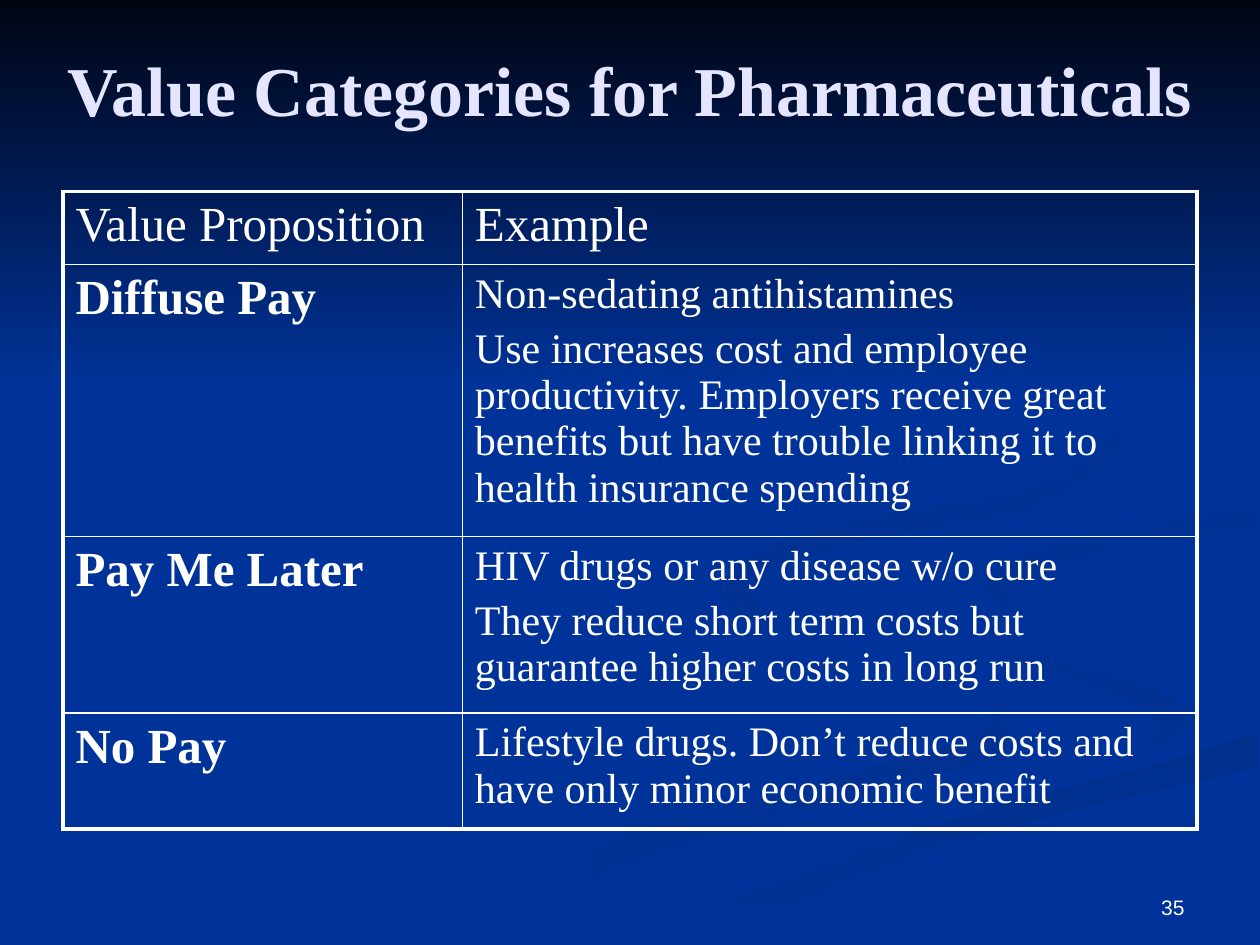
import collections
import itertools

import lxml.etree
import pptx
import pptx.dml.color
import pptx.enum.shapes
import pptx.enum.text
import pptx.oxml.ns
import pptx.util

Inches = pptx.util.Inches
Pt = pptx.util.Pt
Align = pptx.enum.text.PP_ALIGN
Anchor = pptx.enum.text.MSO_ANCHOR
Box = collections.namedtuple("Box", "left top width height")
Swoosh = collections.namedtuple("Swoosh", "start end angle edges")


class Theme:
    background = "003399"
    night = "000514"
    title = "E5E5FF"
    text = "FFFFFF"
    serif = "Times New Roman"
    sans = "Arial"
    title_size = 40
    label_size = 28
    body_size = 24
    number_size = 12
    outer_line = 2.25
    inner_line = 1


SWOOSHES = [
    Swoosh(Theme.background, "003193", 0, [
        [(7.81, 5.53), (6.82, 5.19), (5.94, 4.85), (5.75, 4.59)],
        [(5.75, 4.59), (5.81, 4.84), (6.79, 5.19), (7.81, 5.56), (7.67, 5.87),
         (6.16, 6.29), (4.58, 6.74), (3, 7.49)],
        [(3.61, 7.49), (4.99, 6.87), (6.51, 6.4), (7.8, 6.05), (8, 5.81), (7.81, 5.53)]]),
    Swoosh(Theme.background, "003193", 45, [
        [(7.24, 4.64), (7.46, 5), (8.38, 5.36), (9.07, 5.62), (9.17, 5.85), (8.94, 6.05)],
        [(8.94, 6.05), (9.43, 5.76), (9.19, 5.47), (8.3, 5.19), (7.45, 4.9), (7.24, 4.64)]]),
    Swoosh("002F8C", Theme.background, 90, [
        [(5.03, 7.49), (5.71, 7.49)],
        [(5.71, 7.49), (6.49, 7.1), (7.85, 6.61), (9.98, 6.09)],
        [(9.98, 5.81), (9.2, 6.06), (7.64, 6.47), (6.3, 6.93), (5.03, 7.49)]]),
    Swoosh(Theme.background, Theme.background, 0, [
        [(7.25, 4.64), (7.93, 5.09), (9.2, 5.47), (9.42, 5.79), (8.43, 6.18),
         (6.63, 6.68), (4.77, 7.49)],
        [(5.03, 7.49), (6.3, 6.93), (7.97, 6.38), (9.99, 5.81)],
        [(9.99, 5.38), (8.66, 5.09), (7.81, 4.63), (8.5, 4.27), (9.99, 4.02)],
        [(9.99, 3.87), (8.3, 4.15), (7.42, 4.39), (7.25, 4.64)]]),
    Swoosh("003091", Theme.background, 45, [
        [(9.98, 4.02), (8.49, 4.27), (7.81, 4.65), (8.26, 4.96)],
        [(8.26, 4.96), (8.05, 4.72), (8.78, 4.39), (9.98, 4.2)]]),
    Swoosh("002F8E", Theme.background, 45, [
        [(7.62, 2.33), (8.54, 2.83), (8.94, 3.44), (8.25, 4.02), (6.83, 4.3),
         (5.96, 4.61), (6.22, 5)],
        [(6.22, 5), (5.77, 4.62), (6.49, 4.2), (8.18, 3.86), (8.89, 3.35),
         (8.46, 2.79), (7.62, 2.33)]]),
]

ROWS = [
    ("Value Proposition", ["Example"]),
    ("Diffuse Pay", [
        "Non-sedating antihistamines",
        "Use increases cost and employee productivity. Employers receive great "
        "benefits but have trouble linking it to health insurance spending"]),
    ("Pay Me Later", [
        "HIV drugs or any disease w/o cure",
        "They reduce short term costs but guarantee higher costs in long run"]),
    ("No Pay", ["Lifestyle drugs. Don’t reduce costs and have only minor economic benefit"]),
]
COLUMN_WIDTHS = [3.17, 5.83]
ROW_HEIGHTS = [0.58, 2.16, 1.4, 0.92]


def rgb(value):
    return pptx.dml.color.RGBColor.from_string(value)


def paint_gradient(shape, start, end, angle):
    shape.shadow.inherit = False
    shape.line.fill.background()
    shape.fill.gradient()
    shape.fill.gradient_angle = -angle % 360
    for stop, color in zip(shape.fill.gradient_stops, (start, end)):
        stop.color.rgb = rgb(color)


def smooth_edge(knots, steps=6):
    padded = [knots[0], *knots, knots[-1]]
    points = []
    for before, start, end, after in zip(padded, padded[1:], padded[2:], padded[3:]):
        for t in (step / steps for step in range(steps)):
            points.append(tuple(
                b + (c - a) * t / 2 + (2 * a - 5 * b + 4 * c - d) * t**2 / 2
                + (3 * b - a - 3 * c + d) * t**3 / 2
                for a, b, c, d in zip(before, start, end, after)))
    return points + [knots[-1]]


def write_text(frame, lines, size, color=Theme.text, font=Theme.serif, bold=False, align=Align.LEFT):
    frame.word_wrap = True
    for index, line in enumerate(lines):
        para = frame.add_paragraph() if index else frame.paragraphs[0]
        para.text = line
        para.alignment = align
        para.space_before = Pt(0.2 * size if index else 0)
        para.font.size = Pt(size)
        para.font.name = font
        para.font.bold = bold
        para.font.color.rgb = rgb(color)


def add_text(page, box, anchor, text, size, **style):
    frame = page.shapes.add_textbox(*map(Inches, box)).text_frame
    frame.vertical_anchor = anchor
    write_text(frame, [text], size, **style)


def add_backdrop(page, box):
    page.background.fill.solid()
    page.background.fill.fore_color.rgb = rgb(Theme.background)
    for swoosh in SWOOSHES:
        outline = itertools.chain.from_iterable(map(smooth_edge, swoosh.edges))
        points = [(Inches(box.left + x), Inches(box.top + y)) for x, y in outline]
        builder = page.shapes.build_freeform(*points[0])
        builder.add_line_segments(points[1:], close=True)
        paint_gradient(builder.convert_to_shape(), swoosh.start, swoosh.end, swoosh.angle)
    sky = page.shapes.add_shape(
        pptx.enum.shapes.MSO_SHAPE.RECTANGLE, Inches(box.left), Inches(box.top),
        Inches(box.width), Inches(3.08))
    paint_gradient(sky, Theme.night, Theme.background, 90)


def draw_borders(cell, outer_sides):
    properties = cell._tc.get_or_add_tcPr()
    for position, (side, outer) in enumerate(outer_sides.items()):
        width = Theme.outer_line if outer else Theme.inner_line
        line = lxml.etree.Element(pptx.oxml.ns.qn("a:ln" + side), w=str(Pt(width)))
        fill = lxml.etree.SubElement(line, pptx.oxml.ns.qn("a:solidFill"))
        lxml.etree.SubElement(fill, pptx.oxml.ns.qn("a:srgbClr"), val=Theme.text)
        properties.insert(position, line)


def add_value_table(page, box):
    row_count, column_count = len(ROWS), len(COLUMN_WIDTHS)
    table = page.shapes.add_table(row_count, column_count, *map(Inches, box)).table
    table.first_row = table.horz_banding = False
    for column, width in zip(table.columns, COLUMN_WIDTHS):
        column.width = Inches(width)
    for row, height in zip(table.rows, ROW_HEIGHTS):
        row.height = Inches(height)
    for r, c in itertools.product(range(row_count), range(column_count)):
        cell = table.cell(r, c)
        cell.fill.background()
        draw_borders(cell, {"L": c == 0, "R": c == column_count - 1,
                            "T": r == 0, "B": r == row_count - 1})
        label, examples = ROWS[r]
        size = Theme.label_size if r == 0 or c == 0 else Theme.body_size
        write_text(cell.text_frame, examples if c else [label], size, bold=r > 0 and c == 0)


def main():
    deck = pptx.Presentation()
    deck.slide_width, deck.slide_height = Inches(10), Inches(7.5)
    page = deck.slides.add_slide(deck.slide_layouts[6])
    add_backdrop(page, Box(0, 0, 10, 7.5))
    add_value_table(page, Box(0.5, 1.52, sum(COLUMN_WIDTHS), sum(ROW_HEIGHTS)))
    add_text(page, Box(0, 0.08, 10, 1.25), Anchor.MIDDLE, "Value Categories for Pharmaceuticals",
             Theme.title_size, color=Theme.title, bold=True, align=Align.CENTER)
    add_text(page, Box(7.17, 6.83, 2.33, 0.52), Anchor.BOTTOM, "35",
             Theme.number_size, font=Theme.sans, align=Align.RIGHT)
    deck.save("out.pptx")


if __name__ == "__main__":
    main()
